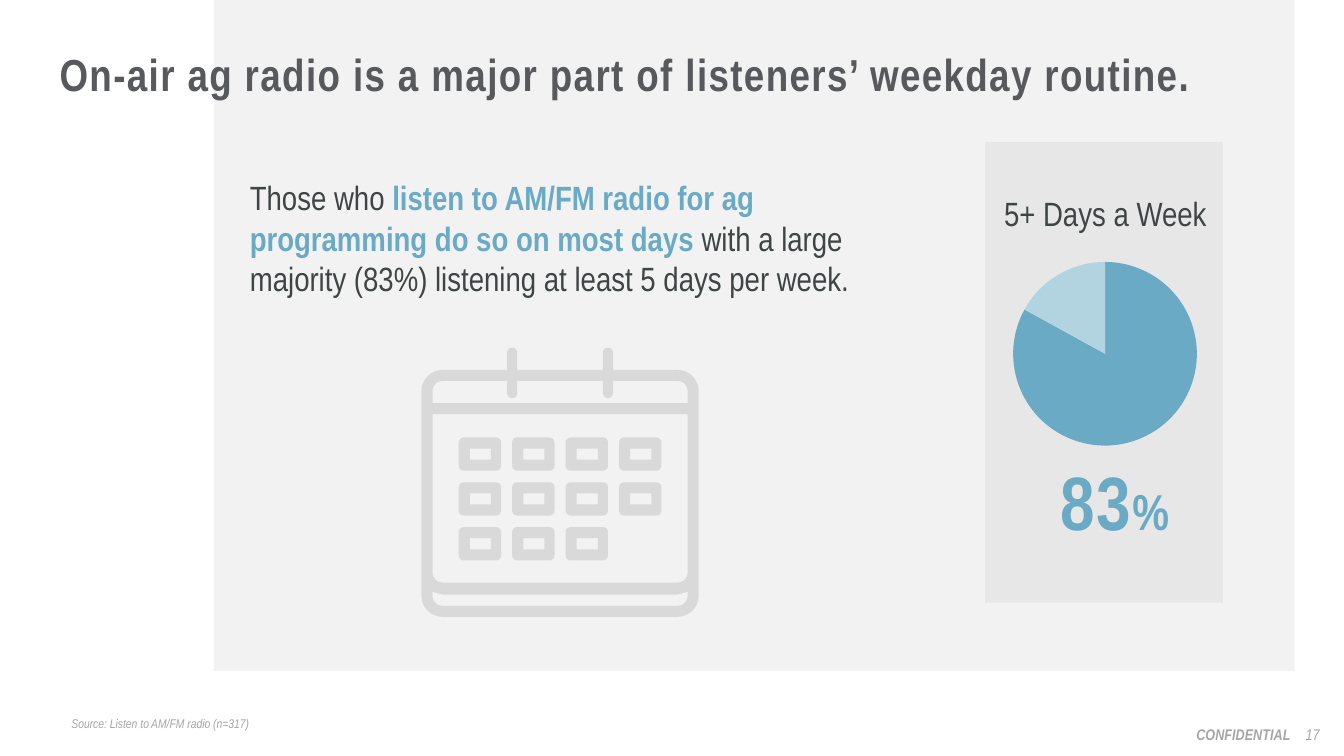
from math import cos, pi, sin

from lxml.etree import SubElement
from pptx import Presentation
from pptx.chart.data import CategoryChartData
from pptx.dml.color import RGBColor
from pptx.enum.chart import XL_CHART_TYPE as ChartType
from pptx.enum.shapes import MSO_SHAPE as Preset
from pptx.enum.text import MSO_ANCHOR as Anchor, MSO_AUTO_SIZE as AutoSize, PP_ALIGN as Align
from pptx.oxml import parse_xml
from pptx.oxml.ns import nsdecls, qn
from pptx.util import Inches, Pt

FONT = "Arial Narrow"
BLUE, PALE_BLUE = "6AAAC4", "B2D3E0"
DARK, TITLE_GRAY, NOTE_GRAY = "3F4444", "57595C", "A6A6A6"
PANEL_GRAY, ICON_GRAY, WHITE = "BFBFBF", "D9D9D9", "FFFFFF"


def color(hex_code):
    """Turn a hex string into a colour."""
    return RGBColor.from_string(hex_code)


def place(shape, left, top, width, height):
    """Move and size a shape, in inches."""
    shape.left, shape.top = Inches(left), Inches(top)
    shape.width, shape.height = Inches(width), Inches(height)


def write(shape, spans, align=Align.LEFT, anchor=Anchor.TOP, line_spacing=None):
    """Write (text, size, colour, bold, italic, tracking) spans into a shape."""
    frame = shape.text_frame
    frame.word_wrap = True
    frame.auto_size = AutoSize.NONE
    frame.vertical_anchor = anchor
    para = frame.paragraphs[0]
    para.alignment = align
    if line_spacing:
        para.line_spacing = line_spacing
    for text, size, hex_code, bold, italic, tracking in spans:
        span = para.add_run()
        span.text = text
        font = span.font
        font.name, font.size = FONT, Pt(size)
        font.bold, font.italic = bold, italic
        font.color.rgb = color(hex_code)
        if tracking:
            span._r.get_or_add_rPr().set("spc", str(tracking * 100))


def add_text(page, bounds, spans, **layout):
    """Add a text box."""
    box = page.shapes.add_textbox(*map(Inches, bounds))
    write(box, spans, **layout)


def add_panel(page, *bounds):
    """Add a see-through gray rectangle."""
    panel = page.shapes.add_shape(Preset.RECTANGLE, *map(Inches, bounds))
    panel.shadow.inherit = False
    panel.fill.solid()
    panel.fill.fore_color.rgb = color(PANEL_GRAY)
    panel.line.fill.background()
    tint = panel._element.spPr.find(qn("a:solidFill"))[0]
    SubElement(tint, qn("a:alpha")).set("val", "20000")


def add_source(page, text, *bounds):
    """Add the source note in a white-edged rectangle."""
    note = page.shapes.add_shape(Preset.RECTANGLE, *map(Inches, bounds))
    note.shadow.inherit = False
    note.fill.background()
    note.line.color.rgb = color(WHITE)
    note.line.width = Pt(1.5)
    write(note, [(text, 9, NOTE_GRAY, False, True, 0)], anchor=Anchor.MIDDLE)


def direction(start, end):
    """Give the unit vector between two corners on a level or upright edge."""
    dx, dy = end[0] - start[0], end[1] - start[1]
    length = (dx * dx + dy * dy) ** 0.5
    return dx / length, dy / length


def round_corners(corners, steps=8):
    """Turn (x, y, radius) corners into outline points."""
    points = []
    for index, (x, y, radius) in enumerate(corners):
        if not radius:
            points.append((x, y))
            continue
        back = direction((x, y), corners[index - 1])
        ahead = direction((x, y), corners[(index + 1) % len(corners)])
        for step in range(steps + 1):
            angle = pi / 2 * step / steps
            along, across = radius * (1 - sin(angle)), radius * (1 - cos(angle))
            points.append((x + along * back[0] + across * ahead[0],
                           y + along * back[1] + across * ahead[1]))
    return points


def block(left, top, right, bottom, top_radius=0, bottom_radius=0):
    """List the corners of a rectangle, clockwise."""
    return [(left, top, top_radius), (right, top, top_radius),
            (right, bottom, bottom_radius), (left, bottom, bottom_radius)]


def calendar_contours():
    """List the contours of the calendar, frame first."""
    left, right, inner_left, inner_right = 4.18, 6.93, 4.29, 6.82
    pins = [(5.03, 5.13), (5.98, 6.08)]
    frame, header = [(left, 3.67, 0.21)], [(inner_left, 3.78, 0.1)]
    for start, end in pins:
        frame += [(start, 3.67, 0), (start, 3.45, 0.05), (end, 3.45, 0.05), (end, 3.67, 0)]
        header += [(start, 3.78, 0), (start, 3.95, 0.05), (end, 3.95, 0.05), (end, 3.78, 0)]
    frame += [(right, 3.67, 0.21), (right, 6.12, 0.21), (left, 6.12, 0.21)]
    header += [(inner_right, 3.78, 0.1), (inner_right, 4, 0), (inner_left, 4, 0)]
    page_area = block(inner_left, 4.11, inner_right, 5.67 + 0.11, 0, 0.1)
    lip = [(inner_left, 5.87, 0), (4.39, 5.9, 0), (6.72, 5.9, 0), (inner_right, 5.87, 0),
           (inner_right, 6.01, 0.1), (inner_left, 6.01, 0.1)]
    contours = [frame, header, page_area, lip]
    for day in range(11):
        row, column = divmod(day, 4)
        x, y = 4.55 + 0.53 * column, 4.34 + 0.445 * row
        contours.append(block(x, y, x + 0.42, y + 0.33, 0.05, 0.05))
        contours.append(block(x + 0.11, y + 0.11, x + 0.32, y + 0.22))
    return contours


def add_calendar(page):
    """Draw the calendar as one outline with holes."""
    builder = None
    for corners in calendar_contours():
        first, *rest = [(Inches(x), Inches(y)) for x, y in round_corners(corners)]
        if builder is None:
            builder = page.shapes.build_freeform(*first)
        else:
            builder.move_to(*first)
        builder.add_line_segments(rest, close=True)
    calendar = builder.convert_to_shape()
    calendar.shadow.inherit = False
    calendar.fill.solid()
    calendar.fill.fore_color.rgb = color(ICON_GRAY)
    calendar.line.fill.background()


def add_pie(page, *bounds):
    """Add the pie of listening days."""
    data = CategoryChartData()
    data.categories = ["1", "2"]
    data.add_series("Series 1", (83, 17))
    chart = page.shapes.add_chart(ChartType.PIE, *map(Inches, bounds), data).chart
    chart.has_legend = chart.has_title = False
    chart.font.name, chart.font.size = FONT, Pt(10)
    chart.font.color.rgb = color(DARK)
    plot = chart.plots[0]
    plot.vary_by_categories = True
    for index, hex_code in enumerate((BLUE, PALE_BLUE)):
        wedge = plot.series[0].points[index].format
        wedge.fill.solid()
        wedge.fill.fore_color.rgb = color(hex_code)
        wedge.line.fill.background()
    area = chart._chartSpace.chart.plotArea
    for old in area.findall(qn("c:layout")):
        area.remove(old)
    area.insert(0, parse_xml(
        f'<c:layout {nsdecls("c")}><c:manualLayout><c:layoutTarget val="inner"/>'
        '<c:xMode val="edge"/><c:yMode val="edge"/><c:x val="0.16"/><c:y val="0.07"/>'
        '<c:w val="0.68"/><c:h val="0.87"/></c:manualLayout></c:layout>'))


def add_title(page, text, *bounds):
    """Fill the title placeholder and bring it above the panel."""
    title = page.shapes.title
    place(title, *bounds)
    write(title, [(text, 32, TITLE_GRAY, True, False, 1)], line_spacing=0.9)
    title._element.getparent().append(title._element)


def main():
    """Build the slide and save it."""
    deck = Presentation()
    deck.slide_width, deck.slide_height = Inches(13.33), Inches(7.5)
    page = deck.slides.add_slide(deck.slide_layouts[5])
    add_text(page, (11.43, 7.14, 1.47, 0.29),
             [("CONFIDENTIAL", 11, NOTE_GRAY, True, True, 0)], align=Align.RIGHT)
    add_panel(page, 2.12, 0, 10.72, 6.66)
    add_text(page, (12.82, 7.09, 0.4, 0.4), [("17", 11, NOTE_GRAY, False, True, 0)],
             align=Align.CENTER, anchor=Anchor.MIDDLE)
    add_calendar(page)
    add_source(page, "Source: Listen to AM/FM radio (n=317)", 0.61, 7.05, 8.55, 0.25)
    add_title(page, "On-air ag radio is a major part of listeners’ weekday routine.",
              0.49, 0.47, 11.73, 0.93)
    add_text(page, (2.38, 1.71, 6.34, 1.31), [
        ("Those who ", 24, DARK, False, False, 0),
        ("listen to AM/FM radio for ag programming do so on most days",
         24, BLUE, True, False, 0),
        (" with a large majority (83%) listening at least 5 days per week.",
         24, DARK, False, False, 0)])
    add_panel(page, 9.77, 1.41, 2.36, 4.57)
    add_pie(page, 9.62, 2.45, 2.68, 2.1)
    add_text(page, (9.86, 1.86, 2.29, 0.84), [("5+ Days a Week", 24, DARK, False, False, 0)])
    add_text(page, (10.42, 4.57, 1.93, 0.92),
             [("83", 54, BLUE, True, False, 1), ("%", 36, BLUE, True, False, 1)],
             line_spacing=0.9)
    deck.save("out.pptx")


if __name__ == "__main__":
    main()
